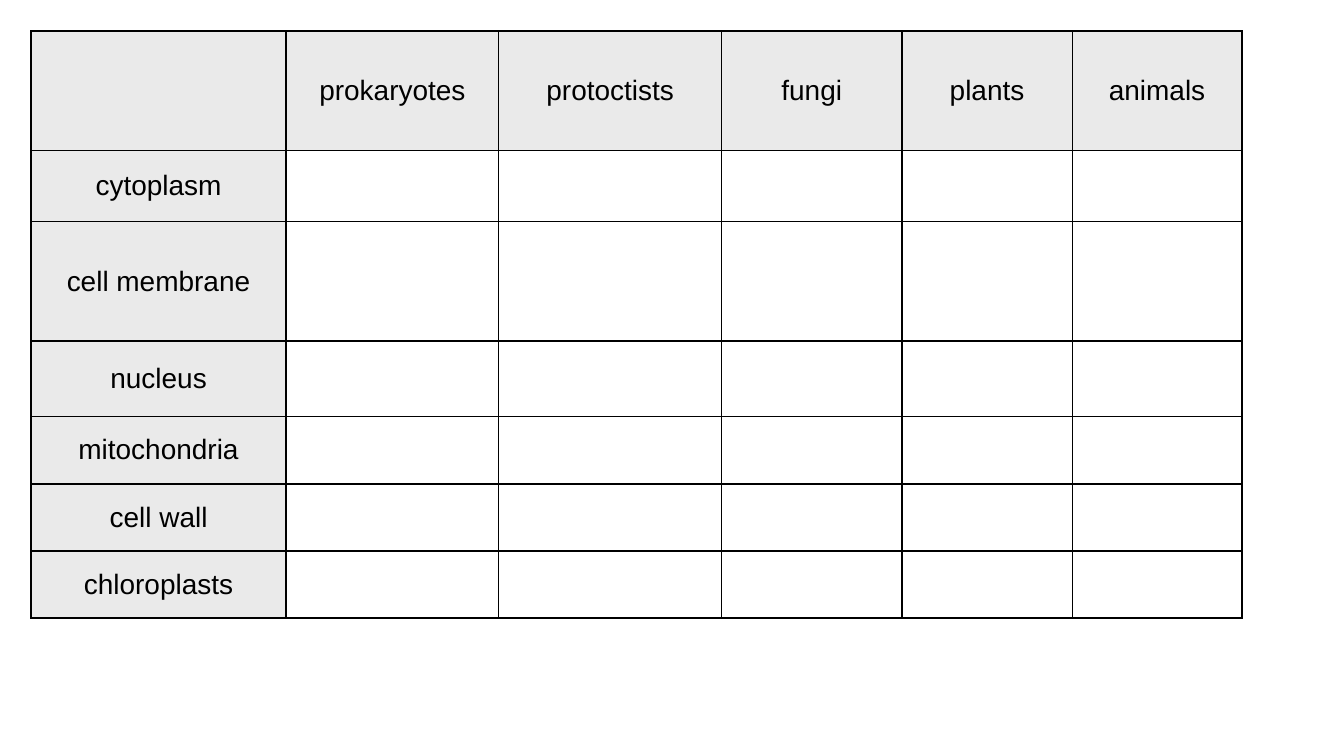
import dataclasses

import lxml.etree
import pptx
import pptx.dml.color
import pptx.enum.text
import pptx.oxml.ns
import pptx.slide
import pptx.table
import pptx.util

INK = "000000"
HEADING_FILL = "EAEAEA"
BORDER_SIDES = ("a:lnL", "a:lnR", "a:lnT", "a:lnB")


@dataclasses.dataclass(frozen=True)
class Band:
    heading: str
    size: float


COLUMNS = [
    Band("", 1.9),
    Band("prokaryotes", 1.58),
    Band("protoctists", 1.66),
    Band("fungi", 1.34),
    Band("plants", 1.27),
    Band("animals", 1.26),
]
ROWS = [
    Band("", 0.89),
    Band("cytoplasm", 0.53),
    Band("cell membrane", 0.89),
    Band("nucleus", 0.56),
    Band("mitochondria", 0.5),
    Band("cell wall", 0.5),
    Band("chloroplasts", 0.5),
]


def color(value: str) -> pptx.dml.color.RGBColor:
    return pptx.dml.color.RGBColor.from_string(value)


def add_borders(cell: pptx.table._Cell, value: str, width: float) -> None:
    properties = cell._tc.get_or_add_tcPr()
    qualified = pptx.oxml.ns.qn
    for position, side in enumerate(BORDER_SIDES):
        line = lxml.etree.Element(qualified(side), w=str(pptx.util.Pt(width)))
        fill = lxml.etree.SubElement(line, qualified("a:solidFill"))
        lxml.etree.SubElement(fill, qualified("a:srgbClr"), val=value)
        properties.insert(position, line)


def format_heading(cell: pptx.table._Cell, text: str) -> None:
    cell.fill.solid()
    cell.fill.fore_color.rgb = color(HEADING_FILL)
    if not text:
        return
    cell.vertical_anchor = pptx.enum.text.MSO_ANCHOR.MIDDLE
    cell.margin_left = cell.margin_right = pptx.util.Inches(0.07)
    cell.margin_top = cell.margin_bottom = pptx.util.Inches(0.04)
    cell.text = text
    paragraph = cell.text_frame.paragraphs[0]
    paragraph.alignment = pptx.enum.text.PP_ALIGN.CENTER
    paragraph.space_before = pptx.util.Pt(3)
    paragraph.font.name = "Arial"
    paragraph.font.size = pptx.util.Pt(15)
    paragraph.font.color.rgb = color(INK)


def add_cell_structure_table(slide: pptx.slide.Slide) -> None:
    width = sum(column.size for column in COLUMNS)
    height = sum(row.size for row in ROWS)
    table = slide.shapes.add_table(
        len(ROWS), len(COLUMNS),
        pptx.util.Inches(0.23), pptx.util.Inches(0.23),
        pptx.util.Inches(width), pptx.util.Inches(height),
    ).table
    table.first_row = False
    table.horz_banding = False
    for table_column, column in zip(table.columns, COLUMNS):
        table_column.width = pptx.util.Inches(column.size)
    for row_index, row in enumerate(ROWS):
        table.rows[row_index].height = pptx.util.Inches(row.size)
        for column_index, column in enumerate(COLUMNS):
            cell = table.cell(row_index, column_index)
            if row_index == 0 or column_index == 0:
                format_heading(cell, row.heading or column.heading)
            else:
                cell.fill.background()
            add_borders(cell, INK, 1)


def main() -> None:
    presentation = pptx.Presentation()
    presentation.slide_width = pptx.util.Inches(10)
    presentation.slide_height = presentation.slide_width * 9 // 16
    slide = presentation.slides.add_slide(presentation.slide_layouts[6])
    add_cell_structure_table(slide)
    presentation.save("out.pptx")


if __name__ == "__main__":
    main()
